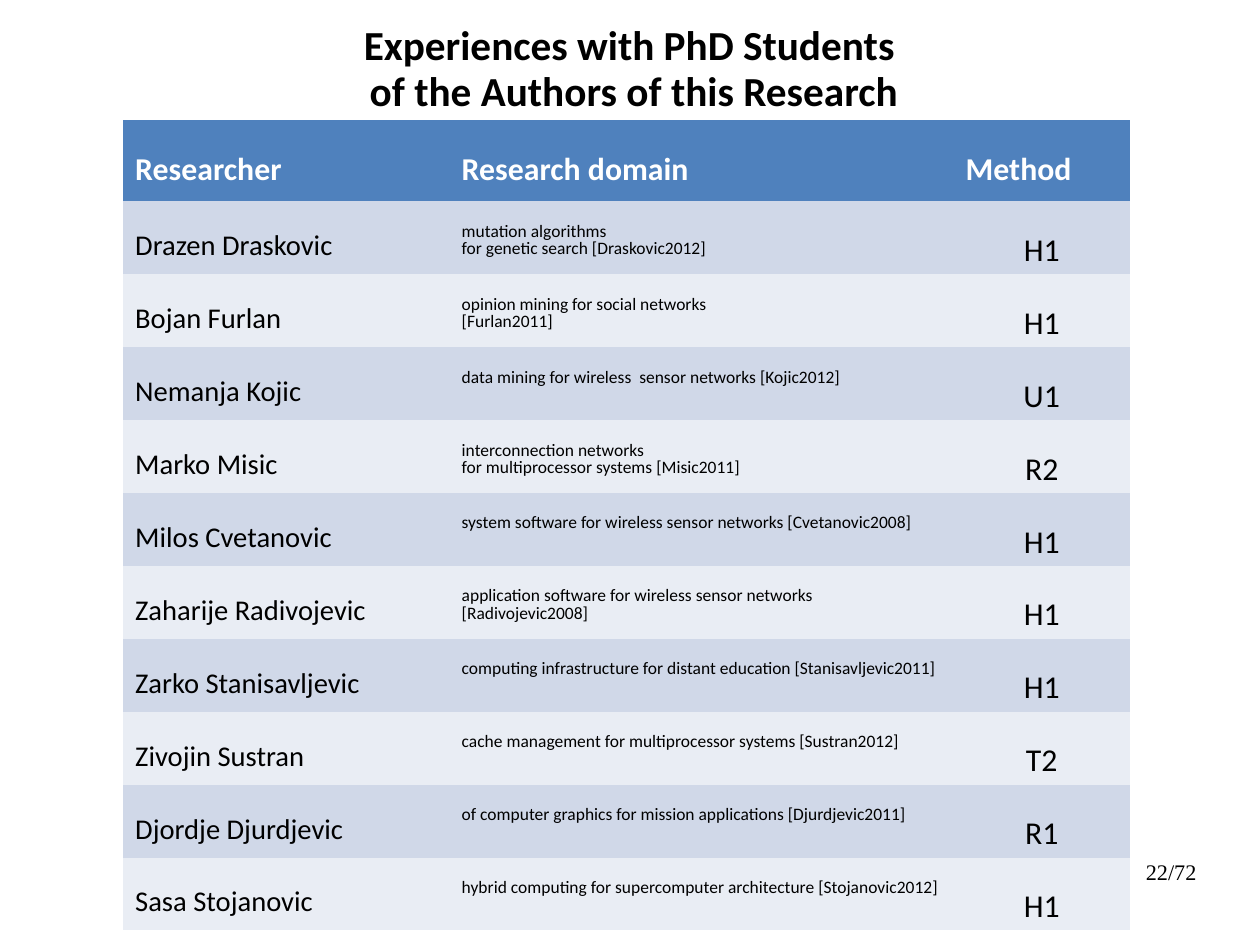
import copy

import pptx
import pptx.dml.color
import pptx.enum.text
import pptx.oxml.ns
import pptx.util

Pt = pptx.util.Pt
qn = pptx.oxml.ns.qn
ALIGN = pptx.enum.text.PP_ALIGN
ANCHOR = pptx.enum.text.MSO_ANCHOR

HEADERS = ["Researcher", "Research domain", "Method"]
STUDENTS = [
    ("Drazen Draskovic", "mutation algorithms \nfor genetic search [Draskovic2012]", "H1"),
    ("Bojan Furlan", "opinion mining for social networks\n[Furlan2011]", "H1"),
    ("Nemanja Kojic", "data mining for wireless  sensor networks [Kojic2012]", "U1"),
    ("Marko Misic", "interconnection networks \nfor multiprocessor systems [Misic2011]", "R2"),
    ("Milos Cvetanovic", "system software for wireless sensor networks [Cvetanovic2008]", "H1"),
    ("Zaharije Radivojevic", "application software for wireless sensor networks [Radivojevic2008]", "H1"),
    ("Zarko Stanisavljevic", "computing infrastructure for distant education [Stanisavljevic2011]", "H1"),
    ("Zivojin Sustran", "cache management for multiprocessor systems [Sustran2012]", "T2"),
    ("Djordje Djurdjevic", "of computer graphics for mission applications [Djurdjevic2011]", "R1"),
    ("Sasa Stojanovic", "hybrid computing for supercomputer architecture [Stojanovic2012]", "H1"),
]
NO_STYLE_NO_GRID = "{2D5ABB26-0587-4C30-8999-92F81FD0307C}"
COLUMN_WIDTHS = [205.7, 317.5, 111.6]
HEADER_HEIGHT, ROW_HEIGHT = 51, 45.95
HEADER_FILL = "4F81BD"
BAND_FILLS = ["D0D8E8", "E9EDF4"]
HEADER_STYLE = dict(size=20, color="FFFFFF", bold=True)
COLUMN_STYLES = [dict(size=18), dict(size=11), dict(size=20, align=ALIGN.CENTER)]
HEADER_TOPS = [21.9, 21.9, 21.9]
BODY_TOPS = [19.9, 13.9, 21.9]


def rgb(color):
    return pptx.dml.color.RGBColor.from_string(color)


def set_text(tf, text, size, color="000000", bold=False, font="Calibri",
             align=ALIGN.LEFT, spacing=0.82):
    tf.word_wrap = True
    p = tf.paragraphs[0]
    p.text = text
    p.alignment = align
    p.line_spacing = spacing
    for r in p.runs:
        r.font.size = Pt(size)
        r.font.name = font
        r.font.bold = bold
        r.font.color.rgb = rgb(color)
    for br in p._p.findall(qn("a:br")):
        br.append(copy.deepcopy(p.runs[0]._r.rPr))


def set_margins(s, left, top, right, bottom):
    s.margin_left, s.margin_top = Pt(left), Pt(top)
    s.margin_right, s.margin_bottom = Pt(right), Pt(bottom)


def add_text(slide, box, text, margins, anchor, **style):
    sp = slide.shapes.add_textbox(*map(Pt, box))
    tf = sp.text_frame
    set_margins(tf, *margins)
    tf.vertical_anchor = anchor
    set_text(tf, text, **style)


def fill_row(row, texts, fill, tops, styles):
    for cell, text, top, style in zip(row.cells, texts, tops, styles):
        cell.fill.solid()
        cell.fill.fore_color.rgb = rgb(fill)
        set_margins(cell, 7.9, top, 7.9, 4.3)
        set_text(cell.text_frame, text, **style)


def add_student_table(slide, left, top):
    height = HEADER_HEIGHT + ROW_HEIGHT * len(STUDENTS)
    table = slide.shapes.add_table(
        len(STUDENTS) + 1, len(HEADERS),
        Pt(left), Pt(top), Pt(sum(COLUMN_WIDTHS)), Pt(height)).table
    table._tbl.tblPr.find(qn("a:tableStyleId")).text = NO_STYLE_NO_GRID
    for column, width in zip(table.columns, COLUMN_WIDTHS):
        column.width = Pt(width)
    header, *body = table.rows
    header.height = Pt(HEADER_HEIGHT)
    fill_row(header, HEADERS, HEADER_FILL, HEADER_TOPS, [HEADER_STYLE] * len(HEADERS))
    for i, (row, student) in enumerate(zip(body, STUDENTS)):
        row.height = Pt(ROW_HEIGHT)
        fill_row(row, student, BAND_FILLS[i % 2], BODY_TOPS, COLUMN_STYLES)


def main():
    prs = pptx.Presentation()
    prs.slide_width, prs.slide_height = Pt(793.75), Pt(595.25)
    slide = prs.slides.add_slide(prs.slide_layouts[6])
    add_text(slide, (39.6, -5.8, 714.2, 99.4),
             "Experiences with PhD Students\n of the Authors of this Research",
             (7.9, 4.3, 7.9, 4.3), ANCHOR.MIDDLE,
             size=26, bold=True, align=ALIGN.CENTER, spacing=0.93)
    add_student_table(slide, 77.3, 75.6)
    add_text(slide, (568.8, 542.2, 185, 41), "22/72", (0, 0, 0, 0), ANCHOR.TOP,
             size=14, font="Times New Roman", align=ALIGN.RIGHT, spacing=0.93)
    prs.save("out.pptx")


if __name__ == "__main__":
    main()
